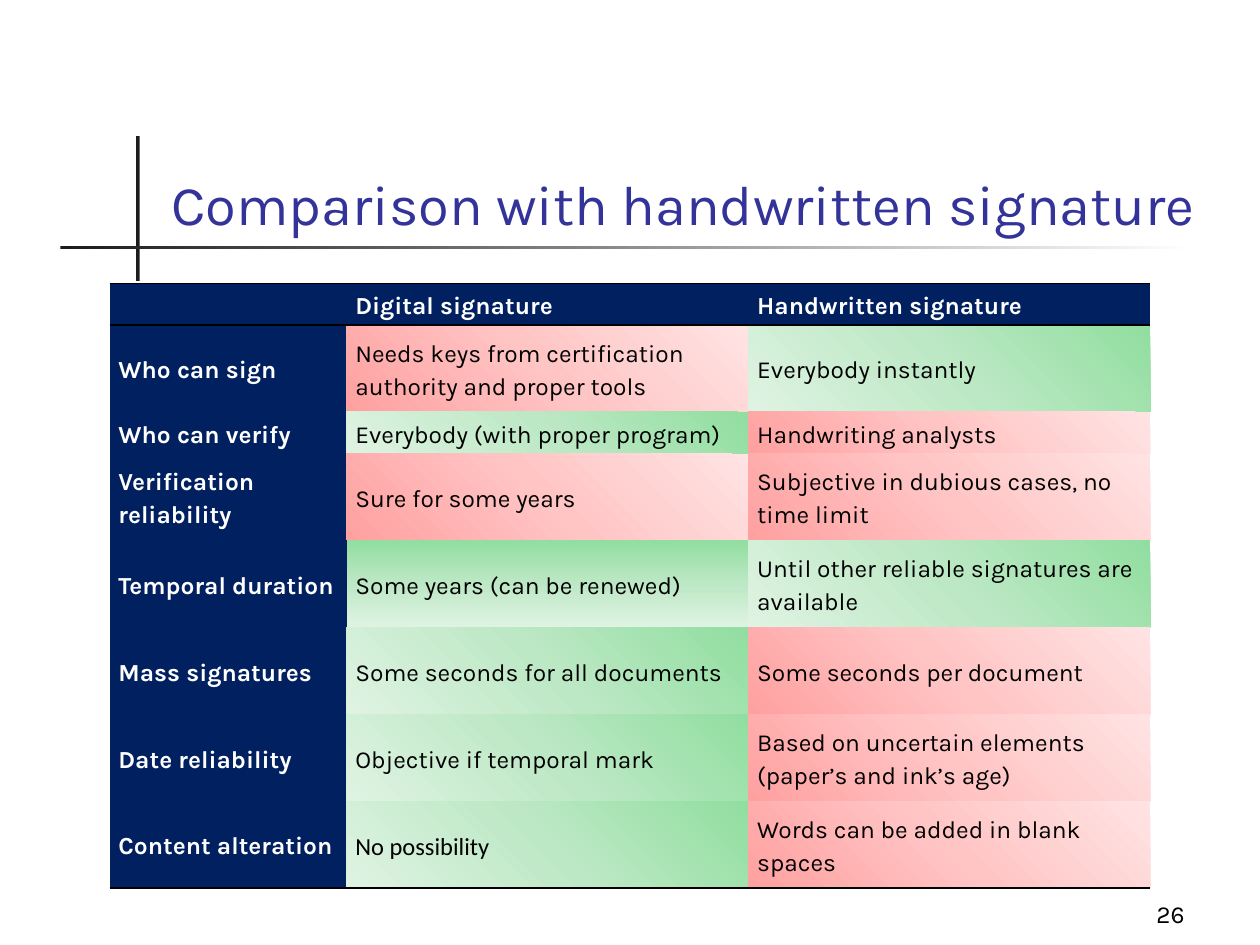
from lxml.etree import SubElement
from pptx import Presentation
from pptx.dml.color import RGBColor
from pptx.enum.shapes import MSO_SHAPE
from pptx.enum.text import MSO_ANCHOR, PP_ALIGN
from pptx.oxml.ns import qn
from pptx.util import Inches, Pt

FONT = "Karla"
NAVY, WHITE, BLACK, DARK, BLUE = "002060", "FFFFFF", "000000", "1C1C1C", "333399"
TITLE = "Comparison with handwritten signature"
PAGE = "26"

# Each tone: gradient colours and angle; None means a radial gradient
# that starts in the lower left corner.
GREENS = ["91DEA0", "BDE8C5", "DFF3E3"]
TONES = {
    "good": (GREENS, 135),
    "fair": (GREENS, 90),
    "bad": (["FFA0A0", "FFC5C5", "FFE3E3"], None),
}

HEAD = ["", "Digital signature", "Handwritten signature"]
ROWS = [
    ("Who can sign",
     ("Needs keys from certification authority and proper tools", "bad"),
     ("Everybody instantly", "good")),
    ("Who can verify",
     ("Everybody (with proper program)", "good"),
     ("Handwriting analysts", "bad")),
    ("Verification reliability",
     ("Sure for some years", "bad"),
     ("Subjective in dubious cases, no time limit", "bad")),
    ("Temporal duration",
     ("Some years (can be renewed)", "fair"),
     ("Until other reliable signatures are available", "good")),
    ("Mass signatures",
     ("Some seconds for all documents", "good"),
     ("Some seconds per document", "bad")),
    ("Date reliability",
     ("Objective if temporal mark", "good"),
     ("Based on uncertain elements (paper’s and ink’s age)", "bad")),
    ("Content alteration",
     ("No possibility", "good"),
     ("Words can be added in blank spaces", "bad")),
]
FONTS = {"No possibility": "Calibri"}
WIDTHS = [1.88, 3.19, 3.19]
LOW, TALL = 0.33, 0.69
SHORT = {0, 2}
PLAIN = "{2D5ABB26-0587-4C30-8999-92F81FD0307C}"  # table style without lines


def rgb(code):
    return RGBColor.from_string(code)


def write(para, text, size, color, bold=False, font=FONT):
    run = para.add_run()
    run.text = text
    run.font.name = font
    run.font.size = Pt(size)
    run.font.bold = bold
    run.font.color.rgb = rgb(color)


def add_bar(shapes, box):
    bar = shapes.add_shape(MSO_SHAPE.RECTANGLE, *map(Inches, box))
    bar.shadow.inherit = False
    bar.line.fill.background()
    return bar.fill


def rule(cell, side):
    line = SubElement(cell._tc.get_or_add_tcPr(), qn(f"a:ln{side}"), w=str(Pt(1)))
    fill = SubElement(line, qn("a:solidFill"))
    SubElement(fill, qn("a:srgbClr"), val=BLACK)


def shade(cell, tone):
    """Give a cell the three-stop gradient of its tone."""
    colors, angle = TONES[tone]
    grad = SubElement(cell._tc.get_or_add_tcPr(), qn("a:gradFill"), rotWithShape="1")
    stops = SubElement(grad, qn("a:gsLst"))
    for i, color in enumerate(colors):
        stop = SubElement(stops, qn("a:gs"), pos=str(i * 50000))
        SubElement(stop, qn("a:srgbClr"), val=color)
    if angle is None:
        radial = SubElement(grad, qn("a:path"), path="circle")
        SubElement(radial, qn("a:fillToRect"), t="100000", r="100000")
    else:
        SubElement(grad, qn("a:lin"), ang=str(angle * 60000), scaled="0")


def set_cell(cell, text, tone, sides):
    cell.vertical_anchor = MSO_ANCHOR.MIDDLE
    cell.margin_left = cell.margin_right = Inches(0.07)
    cell.margin_top = cell.margin_bottom = 0
    for side in sides:
        rule(cell, side)
    if tone:
        shade(cell, tone)
    else:
        cell.fill.solid()
        cell.fill.fore_color.rgb = rgb(NAVY)
    para = cell.text_frame.paragraphs[0]
    para.line_spacing = 1.15
    if text:
        write(para, text, 14, BLACK if tone else WHITE, not tone,
              FONTS.get(text, FONT))


def add_grid(shapes):
    grid = [[(text, None) for text in HEAD]]
    grid += [[(name, None), *pair] for name, *pair in ROWS]
    highs = [LOW if r in SHORT else TALL for r in range(len(grid))]
    frame = shapes.add_table(len(grid), len(WIDTHS), Inches(0.87), Inches(2.25),
                             Inches(sum(WIDTHS)), Inches(sum(highs)))
    table = frame.table
    table.horz_banding = False
    table._tbl.tblPr.find(qn("a:tableStyleId")).text = PLAIN
    for col, width in zip(table.columns, WIDTHS):
        col.width = Inches(width)
    for r, (line, high) in enumerate(zip(grid, highs)):
        table.rows[r].height = Inches(high)
        sides = "TB" if r == 0 else "B" if r == len(grid) - 1 else ""
        for c, (text, tone) in enumerate(line):
            set_cell(table.cell(r, c), text, tone, sides)


def main():
    deck = Presentation()
    deck.slide_width, deck.slide_height = Inches(10), Inches(7.5)
    slide = deck.slides.add_slide(deck.slide_layouts[5])
    shapes = slide.shapes

    post = add_bar(shapes, (1.08, 1.08, 0.03, 1.15))
    post.solid()
    post.fore_color.rgb = rgb(DARK)
    beam = add_bar(shapes, (0.48, 1.95, 9, 0.03))
    beam.gradient()
    beam.gradient_angle = 0
    for stop, color in zip(beam.gradient_stops, (DARK, WHITE)):
        stop.color.rgb = rgb(color)

    title = shapes.title
    title.left, title.top = Inches(1.26), Inches(0.68)
    title.width, title.height = Inches(8.52), Inches(1.25)
    title.text_frame.vertical_anchor = MSO_ANCHOR.BOTTOM
    para = title.text_frame.paragraphs[0]
    para.alignment = PP_ALIGN.LEFT
    write(para, TITLE, 32, BLUE)

    add_grid(shapes)

    note = shapes.add_textbox(*map(Inches, (7.42, 6.92, 2.08, 0.5))).text_frame
    note.word_wrap = True
    note.vertical_anchor = MSO_ANCHOR.BOTTOM
    note.paragraphs[0].alignment = PP_ALIGN.RIGHT
    write(note.paragraphs[0], PAGE, 14, BLACK)

    deck.save("out.pptx")


if __name__ == "__main__":
    main()
